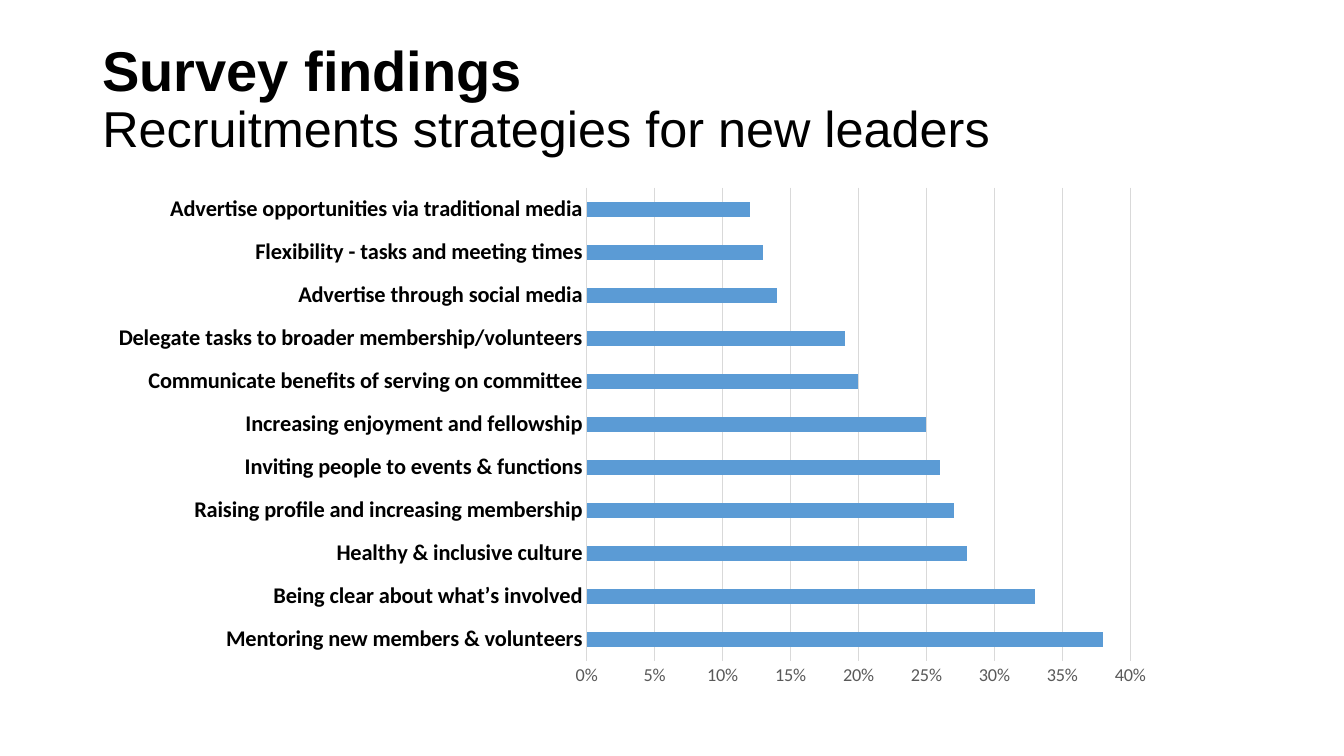
from lxml import etree
from pptx import Presentation
from pptx.chart.data import CategoryChartData
from pptx.dml.color import RGBColor
from pptx.enum.chart import XL_CHART_TYPE, XL_TICK_MARK
from pptx.enum.text import MSO_ANCHOR
from pptx.oxml.ns import qn
from pptx.util import Pt

BAR_CLUSTERED = XL_CHART_TYPE.BAR_CLUSTERED
NO_TICKS = XL_TICK_MARK.NONE
MIDDLE = MSO_ANCHOR.MIDDLE

BLACK, GREY, LIGHT_GREY, BLUE = "000000", "595959", "D9D9D9", "5B9BD5"

# Listed from the bottom bar to the top bar
STRATEGIES = [
    ("Mentoring new members & volunteers", 0.38),
    ("Being clear about what’s involved", 0.33),
    ("Healthy & inclusive culture", 0.28),
    ("Raising profile and increasing membership", 0.27),
    ("Inviting people to events & functions", 0.26),
    ("Increasing enjoyment and fellowship", 0.25),
    ("Communicate benefits of serving on committee", 0.20),
    ("Delegate tasks to broader membership/volunteers", 0.19),
    ("Advertise through social media", 0.14),
    ("Flexibility - tasks and meeting times", 0.13),
    ("Advertise opportunities via traditional media", 0.12),
]


def color(hex_string):
    return RGBColor.from_string(hex_string)


def set_font(font, name, size, hex_string, bold=False):
    font.name = name
    font.size = Pt(size)
    font.bold = bold
    font.color.rgb = color(hex_string)


presentation = Presentation()
presentation.slide_width = Pt(960)
presentation.slide_height = Pt(540)
slide = presentation.slides.add_slide(presentation.slide_layouts[6])

# Title
title = slide.shapes.add_textbox(Pt(66), Pt(28.75), Pt(828), Pt(86.5))
title.text_frame.word_wrap = True
title.text_frame.vertical_anchor = MIDDLE
paragraph = title.text_frame.paragraphs[0]
paragraph.line_spacing = 0.9
heading = paragraph.add_run()
heading.text = "Survey findings"
set_font(heading.font, "Arial", 40, BLACK, bold=True)
paragraph.add_line_break()
subheading = paragraph.add_run()
subheading.text = "Recruitments strategies for new leaders"
set_font(subheading.font, "Arial", 36, BLACK)

# Bar chart
chart_data = CategoryChartData(number_format="0%")
chart_data.categories = [label for label, share in STRATEGIES]
chart_data.add_series("Series 1", [share for label, share in STRATEGIES])
chart = slide.shapes.add_chart(
    BAR_CLUSTERED, Pt(66), Pt(126.75), Pt(767.5), Pt(371.5), chart_data
).chart
chart.has_title = False
chart.has_legend = False
set_font(chart.font, "Calibri", 13, BLACK)

plot = chart.plots[0]
plot.gap_width = 182
plot.vary_by_categories = False
bars = plot.series[0]
bars.format.fill.solid()
bars.format.fill.fore_color.rgb = color(BLUE)

category_axis = chart.category_axis
set_font(category_axis.tick_labels.font, "Calibri", 16, BLACK, bold=True)
category_axis.has_major_gridlines = False

value_axis = chart.value_axis
value_axis.minimum_scale = 0
value_axis.maximum_scale = 0.4
value_axis.major_unit = 0.05
value_axis.has_major_gridlines = True
value_axis.format.line.fill.background()
value_axis.tick_labels.number_format = "0%"
value_axis.tick_labels.number_format_is_linked = False
set_font(value_axis.tick_labels.font, "Calibri", 13, GREY)

for axis in (category_axis, value_axis):
    axis.major_tick_mark = NO_TICKS
    axis.minor_tick_mark = NO_TICKS
for line in (category_axis.format.line, value_axis.major_gridlines.format.line):
    line.color.rgb = color(LIGHT_GREY)
    line.width = Pt(0.75)

# Fixed plot area, as fractions of the chart frame
plot_area = chart.element.find(".//" + qn("c:plotArea"))
for automatic_layout in plot_area.findall(qn("c:layout")):
    plot_area.remove(automatic_layout)
layout = etree.Element(qn("c:layout"))
plot_area.insert(0, layout)
manual_layout = etree.SubElement(layout, qn("c:manualLayout"))
for tag, value in [
    ("layoutTarget", "inner"), ("xMode", "edge"), ("yMode", "edge"),
    ("x", "0.46"), ("y", "0.02"), ("w", "0.506"), ("h", "0.91"),
]:
    etree.SubElement(manual_layout, qn("c:" + tag)).set("val", value)

presentation.save("out.pptx")
